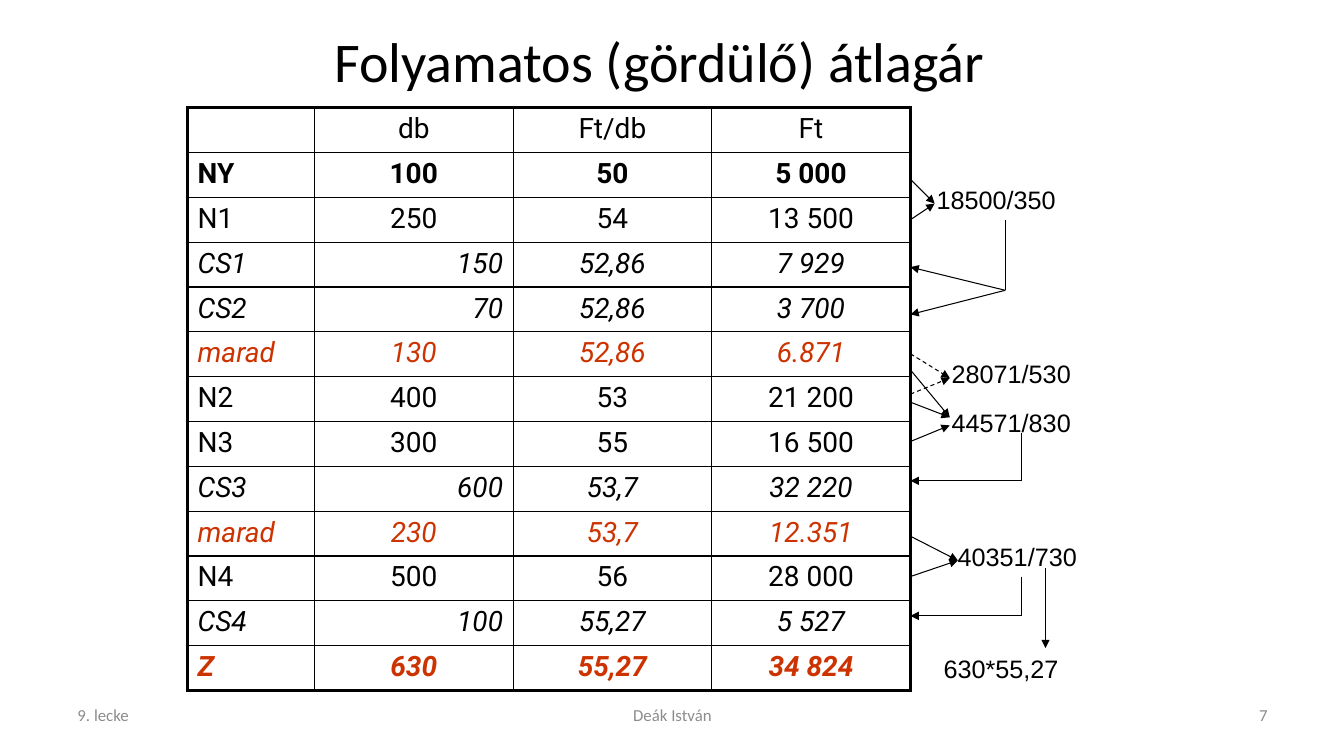
from dataclasses import dataclass

import lxml.etree
import pptx
import pptx.dml.color
import pptx.enum.dml
import pptx.enum.shapes
import pptx.enum.text
import pptx.oxml.ns
import pptx.util

Inches = pptx.util.Inches
Pt = pptx.util.Pt
Align = pptx.enum.text.PP_ALIGN
Anchor = pptx.enum.text.MSO_ANCHOR
qn = pptx.oxml.ns.qn


@dataclass(frozen=True)
class Theme:
    ink: str = "000000"
    accent: str = "CC3300"
    muted: str = "8C8C8C"
    heading_font: str = "Calibri"
    table_font: str = "Roboto"
    note_font: str = "Arial"
    title_size: float = 40
    table_size: float = 20
    note_size: float = 18
    footer_size: float = 12
    outer_border: float = 2.25
    inner_border: float = 1
    arrow_width: float = 0.75


@dataclass(frozen=True)
class StockRow:
    label: str
    pieces: str
    unit_price: str
    value: str
    bold: bool = False
    italic: bool = False
    color: str = Theme.ink
    pieces_align: Align = Align.CENTER


@dataclass(frozen=True)
class Calculation:
    text: str
    left: float
    top: float
    width: float = 1.38


@dataclass(frozen=True)
class Footer:
    text: str
    left: float
    width: float
    align: Align


@dataclass(frozen=True)
class Line:
    start: tuple[float, float]
    end: tuple[float, float]
    arrow: bool = True
    dashed: bool = False


THEME = Theme()
TABLE_LEFT, TABLE_TOP, TABLE_HEIGHT = 1.86, 1.07, 5.78
COLUMN_WIDTHS = (1.26, 1.97, 1.97, 1.97)
EDGE = TABLE_LEFT + sum(COLUMN_WIDTHS)


def issue(label: str, pieces: str, unit_price: str, value: str) -> StockRow:
    return StockRow(label, pieces, unit_price, value, italic=True, pieces_align=Align.RIGHT)


def remainder(label: str, pieces: str, unit_price: str, value: str, bold: bool = False) -> StockRow:
    return StockRow(label, pieces, unit_price, value, bold, italic=True, color=THEME.accent)


STOCK_ROWS = (
    StockRow("", "db", "Ft/db", "Ft"),
    StockRow("NY", "100", "50", "5 000", bold=True),
    StockRow("N1", "250", "54", "13 500"),
    issue("CS1", "150", "52,86", "7 929"),
    issue("CS2", "70", "52,86", "3 700"),
    remainder("marad", "130", "52,86", "6.871"),
    StockRow("N2", "400", "53", "21 200"),
    StockRow("N3", "300", "55", "16 500"),
    issue("CS3", "600", "53,7", "32 220"),
    remainder("marad", "230", "53,7", "12.351"),
    StockRow("N4", "500", "56", "28 000"),
    issue("CS4", "100", "55,27", "5 527"),
    remainder("Z", "630", "55,27", "34 824", bold=True),
)

CALCULATIONS = (
    Calculation("630*55,27", 9.26, 6.43, 1.34),
    Calculation("18500/350", 9.19, 1.78),
    Calculation("44571/830", 9.34, 3.99),
    Calculation("28071/530", 9.34, 3.51),
    Calculation("40351/730", 9.4, 5.32),
)

FOOTERS = (
    Footer("9. lecke", 0.67, 3.11, Align.LEFT),
    Footer("Deák István", 4.56, 4.22, Align.CENTER),
    Footer("7", 9.56, 3.11, Align.RIGHT),
)

LINES = (
    Line((9.97, 2.18), (9.97, 2.88), arrow=False),
    Line((9.97, 2.88), (EDGE, 2.65)),
    Line((9.97, 2.88), (EDGE, 3.12)),
    Line((10.13, 4.3), (10.13, 4.77), arrow=False),
    Line((10.13, 4.77), (EDGE, 4.77)),
    Line((10.13, 5.72), (10.13, 6.11), arrow=False),
    Line((10.13, 6.11), (EDGE, 6.11)),
    Line((10.37, 5.64), (10.37, 6.43)),
    Line((EDGE, 1.78), (9.27, 2.02)),
    Line((EDGE, 2.18), (9.27, 2.02)),
    Line((EDGE, 4.38), (9.42, 4.22)),
    Line((EDGE, 3.99), (9.42, 4.14)),
    Line((EDGE, 3.67), (9.42, 4.14)),
    Line((EDGE, 5.32), (9.5, 5.56)),
    Line((EDGE, 5.72), (9.5, 5.56)),
    Line((EDGE, 3.91), (9.42, 3.75), dashed=True),
    Line((EDGE, 3.51), (9.42, 3.75), dashed=True),
)


def write(frame, text: str, font_name: str, size: float, color: str, align: Align,
          bold: bool = False, italic: bool = False) -> None:
    frame.text = text
    paragraph = frame.paragraphs[0]
    paragraph.alignment = align
    for run in paragraph.runs:
        run.font.name = font_name
        run.font.size = Pt(size)
        run.font.bold = bold
        run.font.italic = italic
        run.font.color.rgb = pptx.dml.color.RGBColor.from_string(color)


def add_title(slide) -> None:
    title = slide.shapes.title
    title.left, title.top, title.width, title.height = map(Inches, (2.17, 0.21, 9, 0.77))
    frame = title.text_frame
    write(frame, "Folyamatos (gördülő) átlagár", THEME.heading_font,
          THEME.title_size, THEME.ink, Align.CENTER)
    frame.auto_size = pptx.enum.text.MSO_AUTO_SIZE.NONE
    frame.vertical_anchor = Anchor.MIDDLE
    frame.margin_right = Inches(0.36)


def set_border(cell, side: str, width: float) -> None:
    border = lxml.etree.SubElement(cell._tc.get_or_add_tcPr(), qn(f"a:ln{side}"), w=str(Pt(width)))
    fill = lxml.etree.SubElement(border, qn("a:solidFill"))
    lxml.etree.SubElement(fill, qn("a:srgbClr"), val=THEME.ink)


def add_stock_table(slide) -> None:
    last_row, last_column = len(STOCK_ROWS) - 1, len(COLUMN_WIDTHS) - 1
    table = slide.shapes.add_table(
        last_row + 1, last_column + 1, Inches(TABLE_LEFT), Inches(TABLE_TOP),
        Inches(sum(COLUMN_WIDTHS)), Inches(TABLE_HEIGHT)).table
    table.first_row = table.horz_banding = False
    for column, width in zip(table.columns, COLUMN_WIDTHS):
        column.width = Inches(width)
    for r, stock in enumerate(STOCK_ROWS):
        table.rows[r].height = Inches(TABLE_HEIGHT / len(STOCK_ROWS))
        texts = (stock.label, stock.pieces, stock.unit_price, stock.value)
        aligns = (Align.LEFT, stock.pieces_align, Align.CENTER, Align.CENTER)
        for c, (text, align) in enumerate(zip(texts, aligns)):
            cell = table.cell(r, c)
            write(cell.text_frame, text, THEME.table_font, THEME.table_size,
                  stock.color, align, stock.bold, stock.italic)
            outer_sides = {"L": c == 0, "R": c == last_column, "T": r == 0, "B": r == last_row}
            for side, is_outer in outer_sides.items():
                set_border(cell, side, THEME.outer_border if is_outer else THEME.inner_border)
            cell.fill.background()


def add_footer(slide, footer: Footer) -> None:
    box = slide.shapes.add_textbox(Inches(footer.left), Inches(6.83), Inches(footer.width), Inches(0.52))
    box.text_frame.word_wrap = True
    box.text_frame.vertical_anchor = Anchor.MIDDLE
    write(box.text_frame, footer.text, THEME.heading_font, THEME.footer_size, THEME.muted, footer.align)


def add_calculation(slide, calculation: Calculation) -> None:
    box = slide.shapes.add_textbox(Inches(calculation.left), Inches(calculation.top),
                                   Inches(calculation.width), Inches(0.4))
    box.text_frame.word_wrap = False
    box.text_frame.auto_size = pptx.enum.text.MSO_AUTO_SIZE.SHAPE_TO_FIT_TEXT
    write(box.text_frame, calculation.text, THEME.note_font, THEME.note_size, THEME.ink, Align.LEFT)


def add_line(slide, line: Line) -> None:
    connector = slide.shapes.add_connector(
        pptx.enum.shapes.MSO_CONNECTOR.STRAIGHT, *map(Inches, line.start + line.end))
    connector.line.width = Pt(THEME.arrow_width)
    connector.line.color.rgb = pptx.dml.color.RGBColor.from_string(THEME.ink)
    if line.dashed:
        connector.line.dash_style = pptx.enum.dml.MSO_LINE.DASH
    if line.arrow:
        lxml.etree.SubElement(connector.line._get_or_add_ln(), qn("a:tailEnd"), type="triangle")
    lxml.etree.SubElement(connector._element.spPr, qn("a:effectLst"))


def main() -> None:
    presentation = pptx.Presentation()
    presentation.slide_width, presentation.slide_height = Inches(13.33), Inches(7.5)
    slide = presentation.slides.add_slide(presentation.slide_layouts[5])
    add_title(slide)
    add_stock_table(slide)
    for footer in FOOTERS:
        add_footer(slide, footer)
    for calculation in CALCULATIONS:
        add_calculation(slide, calculation)
    for line in LINES:
        add_line(slide, line)
    presentation.save("out.pptx")


if __name__ == "__main__":
    main()
